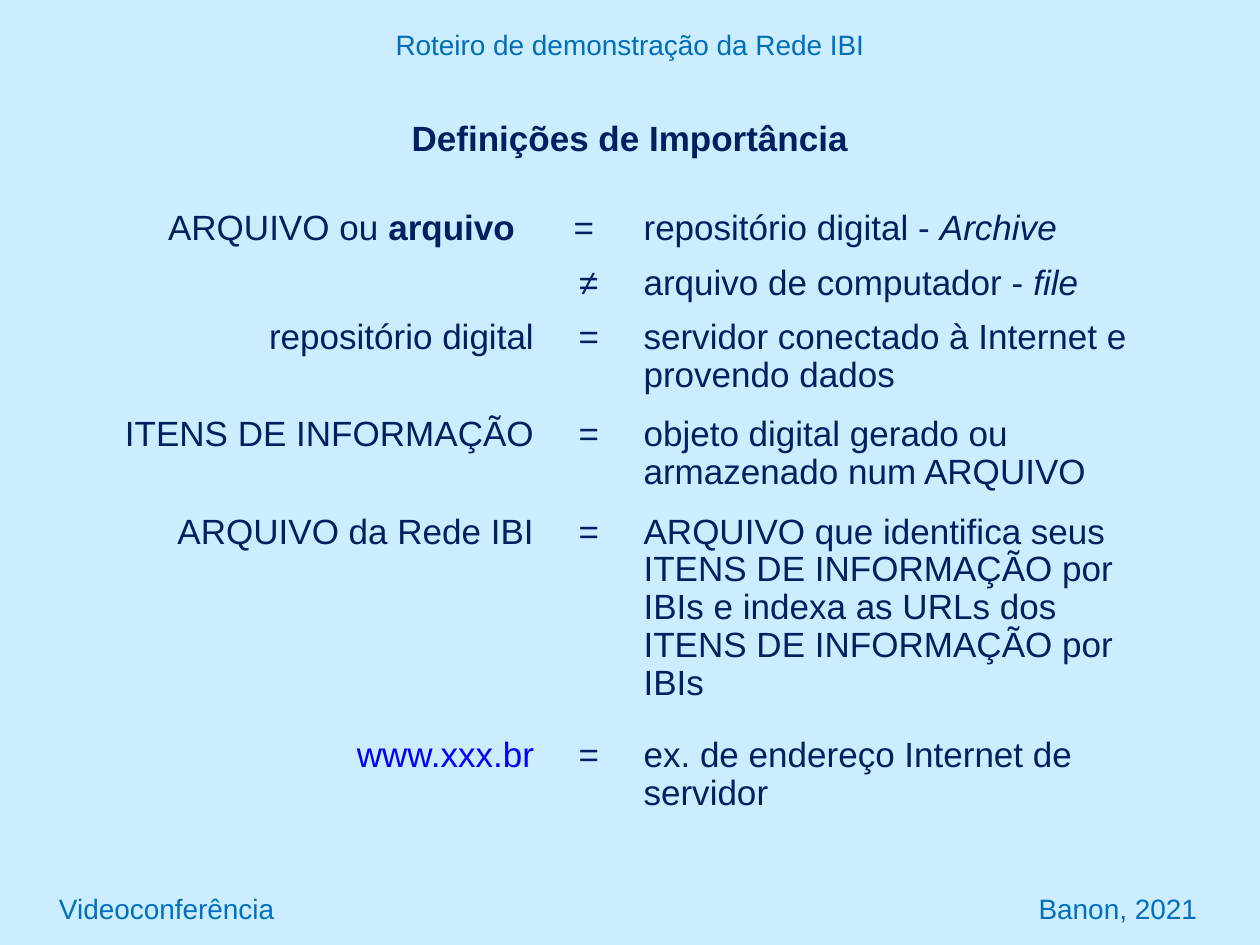
from pptx import Presentation
from pptx.dml.color import RGBColor
from pptx.enum.text import MSO_ANCHOR, PP_ALIGN
from pptx.util import Cm, Pt

LEFT, CENTER, RIGHT = PP_ALIGN.LEFT, PP_ALIGN.CENTER, PP_ALIGN.RIGHT
TOP, MIDDLE = MSO_ANCHOR.TOP, MSO_ANCHOR.MIDDLE

PALE_BLUE = RGBColor(0xCC, 0xEC, 0xFF)
NAVY = RGBColor(0x00, 0x20, 0x60)
HEADER_BLUE = RGBColor(0x00, 0x6F, 0xBA)
FOOTER_BLUE = RGBColor(0x00, 0x70, 0xC0)
ADDRESS_BLUE = RGBColor(0x00, 0x00, 0xFF)

NO_STYLE_NO_GRID = "{2D5ABB26-0587-4C30-8999-92F81FD0307C}"
COLUMN_WIDTHS = (9.42, 1.7, 11)
COLUMN_ALIGNMENTS = (RIGHT, CENTER, LEFT)
ROW_HEIGHTS = (1.11, 1.09, 1.96, 1.96, 4.5, 1.83)

# Each cell is a list of (text, style) runs.
DEFINITIONS = (
    ([("ARQUIVO ou ", ""), ("arquivo", "bold")], [("= ", "")],
     [("repositório digital - ", ""), ("Archive", "italic")]),
    ([], [("≠", "")],
     [("arquivo de computador -", ""), (" file", "italic")]),
    ([("repositório digital", "")], [("=", "")],
     [("servidor conectado à Internet e provendo dados", "")]),
    ([("ITENS DE INFORMAÇÃO", "")], [("=", "")],
     [("objeto digital gerado ou armazenado num ARQUIVO", "")]),
    ([("ARQUIVO da Rede IBI", "")], [("=", "")],
     [("ARQUIVO que identifica seus ITENS DE INFORMAÇÃO por IBIs "
       "e indexa as URLs dos ITENS DE INFORMAÇÃO por IBIs", "")]),
    ([("www.xxx.br", "address")], [("=", "")],
     [("ex. de endereço Internet de servidor", "")]),
)


def format_font(font, size, color, bold=False, italic=False):
    font.name = "Arial"
    font.size = Pt(size)
    font.color.rgb = color
    font.bold = bold
    font.italic = italic


def add_text(page, text, position, size, color, alignment=CENTER,
             anchor=TOP, bold=False, inset=0.13):
    box = page.shapes.add_textbox(*(Cm(length) for length in position))
    frame = box.text_frame
    frame.word_wrap = True
    frame.vertical_anchor = anchor
    frame.margin_top = frame.margin_bottom = Cm(inset)
    frame.text = text
    para = frame.paragraphs[0]
    para.alignment = alignment
    format_font(para.runs[0].font, size, color, bold)


def fill_cell(cell, spans, alignment):
    cell.fill.solid()
    cell.fill.fore_color.rgb = PALE_BLUE
    para = cell.text_frame.paragraphs[0]
    para.alignment = alignment
    para.line_spacing = 0.97
    for text, style in spans:
        span = para.add_run()
        span.text = text
        color = ADDRESS_BLUE if style == "address" else NAVY
        format_font(span.font, 20, color, style == "bold", style == "italic")


def add_definitions(page):
    frame = page.shapes.add_table(
        len(ROW_HEIGHTS), len(COLUMN_WIDTHS), Cm(1.6), Cm(4.11),
        Cm(sum(COLUMN_WIDTHS)), Cm(sum(ROW_HEIGHTS)))
    table = frame.table
    table.first_row = table.horz_banding = False
    table_properties = frame.element.graphic.graphicData.tbl.tblPr
    table_properties[0].text = NO_STYLE_NO_GRID
    for column, width in zip(table.columns, COLUMN_WIDTHS):
        column.width = Cm(width)
    for row, height, entries in zip(table.rows, ROW_HEIGHTS, DEFINITIONS):
        row.height = Cm(height)
        for cell, spans, alignment in zip(row.cells, entries, COLUMN_ALIGNMENTS):
            fill_cell(cell, spans, alignment)
    table.cell(0, 0).margin_right = Cm(0.64)


def main():
    deck = Presentation()
    deck.slide_width, deck.slide_height = Cm(25.4), Cm(19.05)
    page = deck.slides.add_slide(deck.slide_layouts[6])
    page.background.fill.solid()
    page.background.fill.fore_color.rgb = PALE_BLUE

    add_text(page, "Definições de Importância", (1.75, 2.34, 21.9, 1.07),
             20, NAVY, bold=True, inset=0)
    add_text(page, "Roteiro de demonstração da Rede IBI", (0, 0.43, 25.4, 0.94),
             16, HEADER_BLUE)
    add_text(page, "Videoconferência", (0.94, 17.78, 11.7, 1.07),
             16, FOOTER_BLUE, LEFT, MIDDLE)
    add_text(page, "Banon, 2021", (12.68, 17.78, 11.7, 1.07),
             16, FOOTER_BLUE, RIGHT, MIDDLE)
    add_definitions(page)
    deck.save("out.pptx")


if __name__ == "__main__":
    main()
